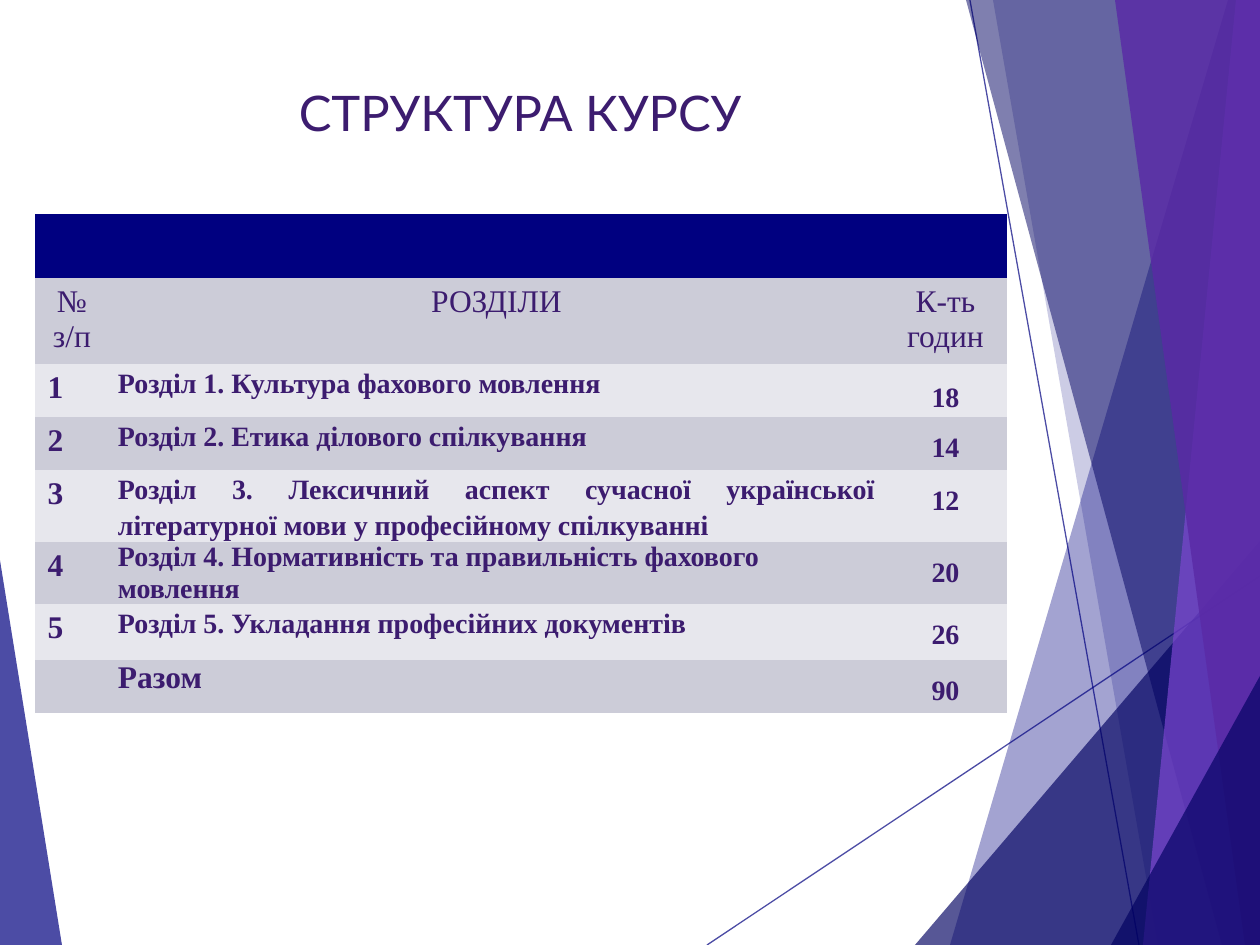
from lxml.etree import SubElement
from pptx import Presentation
from pptx.dml.color import RGBColor
from pptx.enum.shapes import MSO_CONNECTOR
from pptx.enum.text import MSO_ANCHOR, MSO_AUTO_SIZE, PP_ALIGN
from pptx.oxml.ns import qn
from pptx.util import Pt

SCALE = 914400 / 126
W, H = 1260, 945
NAVY, DEEP, VIOLET, PURPLE = "000080", "000060", "7B46D0", "5A2AA6"
INK, BAND, LIGHT = "3C1C6F", "CCCCD8", "E7E7ED"
SERIF = "Times New Roman"
NO_STYLE = "{2D5ABB26-0587-4C30-8999-92F81FD0307C}"

COLS = [74, 775, 123]
ROWS = [64, 86, 53, 53, 72, 62, 56, 53]
HEADINGS = ["№ з/п", "РОЗДІЛИ", "К-ть годин"]
SECTIONS = [
    ("1", "Розділ 1. Культура фахового мовлення", "18"),
    ("2", "Розділ 2. Етика ділового спілкування", "14"),
    ("3", "Розділ 3. Лексичний аспект сучасної української літературної мови у професійному спілкуванні", "12"),
    ("4", "Розділ 4. Нормативність та правильність фахового мовлення", "20"),
    ("5", "Розділ 5. Укладання професійних документів", "26"),
    ("", "Разом", "90"),
]

NUMBER = dict(alignment=PP_ALIGN.LEFT)
NAME = dict(alignment=PP_ALIGN.JUSTIFY, line_spacing=1.15, space_after=Pt(10))
PLAIN_NAME = dict(alignment=PP_ALIGN.LEFT)
HOURS = dict(alignment=PP_ALIGN.CENTER, line_spacing=1.5)
CENTRED = dict(alignment=PP_ALIGN.CENTER)
TIGHT = dict(margin_left=9, margin_right=9, margin_top=0, margin_bottom=0)


def px(n):
    return round(n * SCALE)


def rgb(color):
    return RGBColor.from_string(color)


def set_attrs(obj, values):
    for name, value in values.items():
        setattr(obj, name, value)


def set_alpha(sp, percent):
    color = next(sp._element.spPr.iter(qn("a:srgbClr")))
    SubElement(color, qn("a:alpha"), val=str(percent * 1000))


def write(p, text, size, bold, font, fmt):
    set_attrs(p, fmt)
    r = p.add_run()
    r.text = text
    set_attrs(r.font, dict(name=font, size=Pt(size), bold=bold))
    r.font.color.rgb = rgb(INK)


def add_facet(s, x, y, points, color, alpha):
    points = [(x + a, y + b) for a, b in points]
    builder = s.shapes.build_freeform(*points[0], scale=SCALE)
    builder.add_line_segments(points[1:], close=True)
    sp = builder.convert_to_shape()
    sp.shadow.inherit = False
    sp.fill.solid()
    sp.fill.fore_color.rgb = rgb(color)
    sp.line.fill.background()
    set_alpha(sp, alpha)


def add_ray(s, x, y, ends):
    x1, y1, x2, y2 = ends
    line = s.shapes.add_connector(
        MSO_CONNECTOR.STRAIGHT, px(x + x1), px(y + y1), px(x + x2), px(y + y2))
    line.line.width = Pt(0.75)
    line.line.color.rgb = rgb(NAVY)
    set_alpha(line, 70)
    SubElement(line._element.spPr, qn("a:effectLst"))


def add_backdrop(s, x, y, w, h):
    corner, edge = [(w, h)], [(w, h), (w, 0)]
    add_facet(s, x, y, [(0, 560), (62, h), (0, h)], NAVY, 70)
    for ends in [(707, h, w, 576), (970, 0, 1139, h)]:
        add_ray(s, x, y, ends)
    facets = [
        ([(1228, 0), (950, h)] + edge, NAVY, 36),
        ([(993, 0), (1158, h)] + edge, NAVY, 20),
        ([(915, h), (w, 541)] + corner, DEEP, 66),
        ([(966, 0), (1222, h)] + edge, DEEP, 50),
        ([(1236, 0), (1143, h)] + edge, VIOLET, 70),
        ([(1115, 0), (1245, h)] + edge, PURPLE, 82),
        ([(1111, h), (w, 676)] + corner, DEEP, 66),
    ]
    for points, color, alpha in facets:
        add_facet(s, x, y, points, color, alpha)


def add_title(s, x, y, w, h):
    sp = s.shapes.title
    set_attrs(sp, dict(left=px(x), top=px(y), width=px(w), height=px(h)))
    tf = sp.text_frame
    set_attrs(tf, dict(word_wrap=True, auto_size=MSO_AUTO_SIZE.NONE,
                       vertical_anchor=MSO_ANCHOR.MIDDLE))
    write(tf.paragraphs[0], "СТРУКТУРА КУРСУ", 28, False, "Lato", CENTRED)


def fill_cell(cell, color, margins=None):
    cell.fill.solid()
    cell.fill.fore_color.rgb = rgb(color)
    set_attrs(cell, {name: px(n) for name, n in (margins or {}).items()})


def add_sections(s, x, y):
    table = s.shapes.add_table(
        len(ROWS), len(COLS), px(x), px(y), px(sum(COLS)), px(sum(ROWS))).table
    set_attrs(table, dict(first_row=False, horz_banding=False))
    table._tbl.tblPr.find(qn("a:tableStyleId")).text = NO_STYLE
    for col, width in zip(table.columns, COLS):
        col.width = px(width)
    for row, height in zip(table.rows, ROWS):
        row.height = px(height)

    table.cell(0, 0).merge(table.cell(0, 2))
    fill_cell(table.cell(0, 0), NAVY)
    for j, text in enumerate(HEADINGS):
        cell = table.cell(1, j)
        fill_cell(cell, BAND)
        write(cell.text_frame.paragraphs[0], text, 18, False, SERIF, CENTRED)

    for i, values in enumerate(SECTIONS):
        total = not values[0]
        name = PLAIN_NAME if total or values[0] == "4" else NAME
        styles = [(18, NUMBER, None), (18 if total else 16, name, TIGHT), (16, HOURS, TIGHT)]
        for j, (text, (size, fmt, margins)) in enumerate(zip(values, styles)):
            cell = table.cell(i + 2, j)
            fill_cell(cell, BAND if i % 2 else LIGHT, margins)
            if text:
                write(cell.text_frame.paragraphs[0], text, size, True, SERIF, fmt)
    first_hours = table.cell(2, 2)
    first_hours.vertical_anchor = MSO_ANCHOR.MIDDLE
    first_hours.text_frame.paragraphs[0].space_after = Pt(10)


def main():
    prs = Presentation()
    set_attrs(prs, dict(slide_width=px(W), slide_height=px(H)))
    s = prs.slides.add_slide(prs.slide_layouts[5])
    add_backdrop(s, 0, 0, W, H)
    add_sections(s, 35, 214)
    add_title(s, 205, 76, 630, 72)
    prs.save("out.pptx")


if __name__ == "__main__":
    main()
